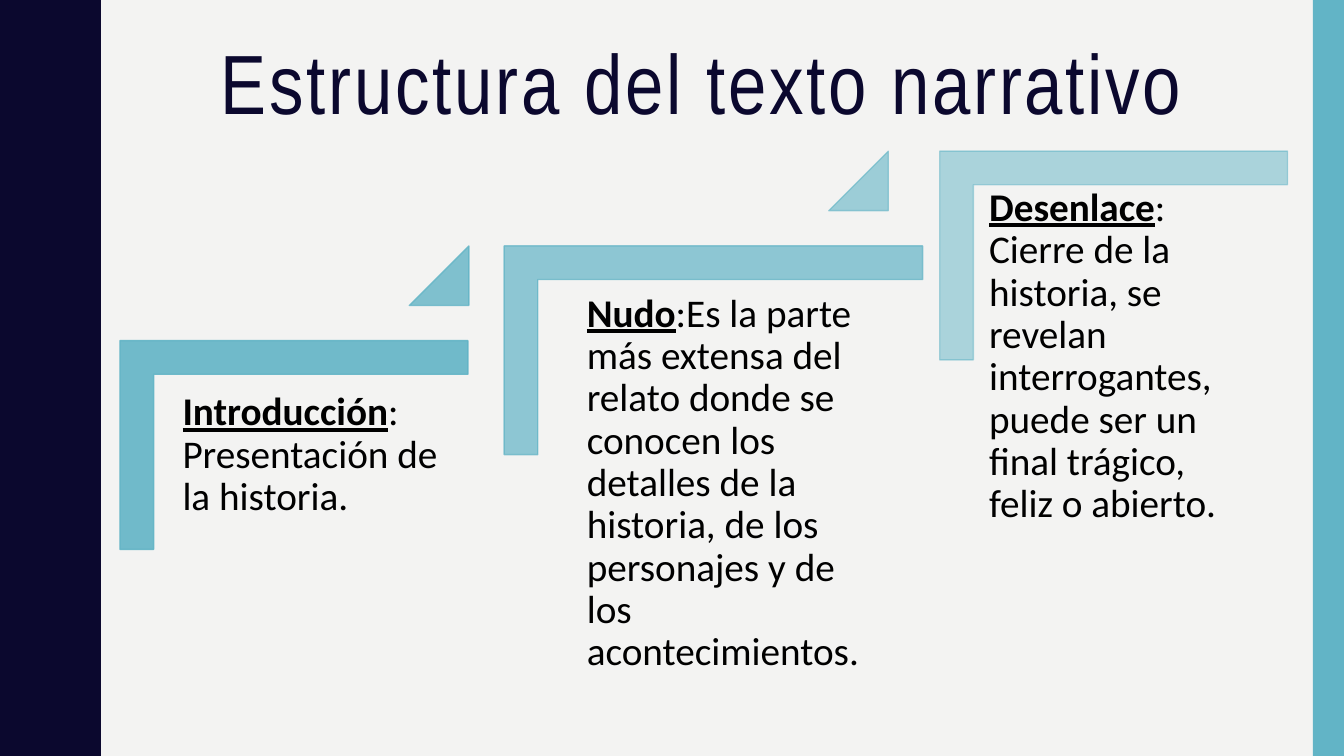
from lxml import etree
from pptx import Presentation
from pptx.dml.color import RGBColor
from pptx.enum.shapes import MSO_SHAPE as Shape
from pptx.enum.text import MSO_ANCHOR as Anchor, MSO_AUTO_SIZE as AutoSize, PP_ALIGN as Align
from pptx.oxml.ns import qn
from pptx.util import Inches, Pt

NAVY, TEAL, PALE, BLACK = "0B082E", "62B4C6", "F3F3F2", "000000"
WIDTH, HEIGHT = 13.33, 7.5
WAVE_LENGTH = 1.5
HALF_WAVE = [
    (0.78, 0), (0.78, 0.07), (0.79, 0.14), (0.8, 0.2), (0.81, 0.25),
    (0.83, 0.29), (0.85, 0.33), (0.87, 0.38), (0.89, 0.42), (0.91, 0.46),
    (0.93, 0.5), (0.95, 0.55), (0.96, 0.61), (0.97, 0.68), (0.97, 0.75),
]
BRACKET_HEIGHT, FIRST_TOP, RISE = 2.07, 3.38, 0.94
# Each stage: bracket left and width, text left, top and width, heading, description.
STAGES = [
    (1.19, 3.45, (1.69, 3.77, 3.12), "Introducción", ": Presentación de la historia."),
    (5.0, 4.15, (5.7, 2.79, 3.12), "Nudo",
     ":Es la parte más extensa del relato donde se conocen los detalles de la historia, "
     "de los personajes y de los acontecimientos."),
    (9.32, 3.45, (9.69, 1.74, 2.58), "Desenlace",
     ": Cierre de la historia, se revelan interrogantes, puede ser un final trágico, "
     "feliz o abierto."),
]
TRIANGLE_LEFTS = [4.06, 8.22]


def color(value):
    """Turn a hex string into a colour."""
    return RGBColor.from_string(value)


def paint(shape, fill, opacity=None):
    """Fill a shape; with an opacity, outline it too and make both translucent."""
    shape.shadow.inherit = False
    shape.fill.solid()
    shape.fill.fore_color.rgb = color(fill)
    if opacity is None:
        shape.line.fill.background()
        return
    shape.line.color.rgb = color(fill)
    shape.line.width = Pt(1)
    for tone in shape._element.spPr.iter(qn("a:srgbClr")):
        etree.SubElement(tone, qn("a:alpha")).set("val", str(opacity * 1000))


def add_preset(slide, kind, left, top, width, height, opacity=None):
    """Add a teal preset shape."""
    shape = slide.shapes.add_shape(
        kind, Inches(left), Inches(top), Inches(width), Inches(height))
    paint(shape, TEAL, opacity)
    return shape


def add_wavy_edge(slide):
    """Draw the navy band whose right side repeats one wave."""
    wave = HALF_WAVE + [(x, WAVE_LENGTH - y) for x, y in HALF_WAVE[-2::-1]]
    edge = [(x, y + WAVE_LENGTH * turn)
            for turn in range(round(HEIGHT / WAVE_LENGTH)) for x, y in wave]
    builder = slide.shapes.build_freeform(0, 0, scale=Inches(1))
    builder.add_line_segments(edge + [(0, HEIGHT)], close=True)
    paint(builder.convert_to_shape(), NAVY)


def set_title(slide, text):
    """Place and format the title placeholder."""
    title = slide.shapes.title
    title.left, title.top = Inches(1.41), Inches(0.27)
    title.width, title.height = Inches(11.11), Inches(1.19)
    frame = title.text_frame
    frame.text = text
    frame.auto_size = AutoSize.NONE
    frame.vertical_anchor = Anchor.MIDDLE
    para = frame.paragraphs[0]
    para.alignment = Align.CENTER
    para.line_spacing = 0.9
    font = para.runs[0].font
    font.size, font.name, font.color.rgb = Pt(60), "Arial Narrow", color(NAVY)
    para.runs[0]._r.get_or_add_rPr().set("spc", "200")


def add_bracket(slide, left, top, width, opacity):
    """Add a corner turned a quarter, given the place where it shows."""
    shift = (width - BRACKET_HEIGHT) / 2
    bracket = add_preset(slide, Shape.CORNER, left + shift, top - shift,
                         BRACKET_HEIGHT, width, opacity)
    bracket.rotation = 90
    bracket.adjustments[0] = bracket.adjustments[1] = 0.161


def add_description(slide, place, heading, text):
    """Add a text box with an underlined heading run and a plain run."""
    left, top, width = place
    box = slide.shapes.add_textbox(Inches(left), Inches(top), Inches(width), Inches(2.73))
    frame = box.text_frame
    frame.word_wrap = True
    frame.margin_left = frame.margin_right = Inches(0.12)
    frame.margin_top = frame.margin_bottom = Inches(0.12)
    para = frame.paragraphs[0]
    para.line_spacing = 0.9
    for words, strong in ((heading, True), (text, False)):
        span = para.add_run()
        span.text = words
        font = span.font
        font.size, font.name, font.color.rgb = Pt(28), "Calibri", color(BLACK)
        font.bold = font.underline = strong


def main():
    """Build the slide and save the deck."""
    deck = Presentation()
    deck.slide_width, deck.slide_height = Inches(WIDTH), Inches(HEIGHT)
    slide = deck.slides.add_slide(deck.slide_layouts[5])
    background = slide.background.fill
    background.solid()
    background.fore_color.rgb = color(PALE)
    add_wavy_edge(slide)
    add_preset(slide, Shape.RECTANGLE, 13.02, 0, 0.31, HEIGHT)
    set_title(slide, "Estructura del texto narrativo")
    for index, (left, width, place, heading, text) in enumerate(STAGES):
        top, opacity = FIRST_TOP - RISE * index, 90 - 20 * index
        add_bracket(slide, left, top, width, opacity)
        add_description(slide, place, heading, text)
        if index < len(TRIANGLE_LEFTS):
            triangle = add_preset(slide, Shape.ISOSCELES_TRIANGLE, TRIANGLE_LEFTS[index],
                                  top - RISE, 0.59, 0.59, opacity - 10)
            triangle.adjustments[0] = 1
    deck.save("out.pptx")


if __name__ == "__main__":
    main()
